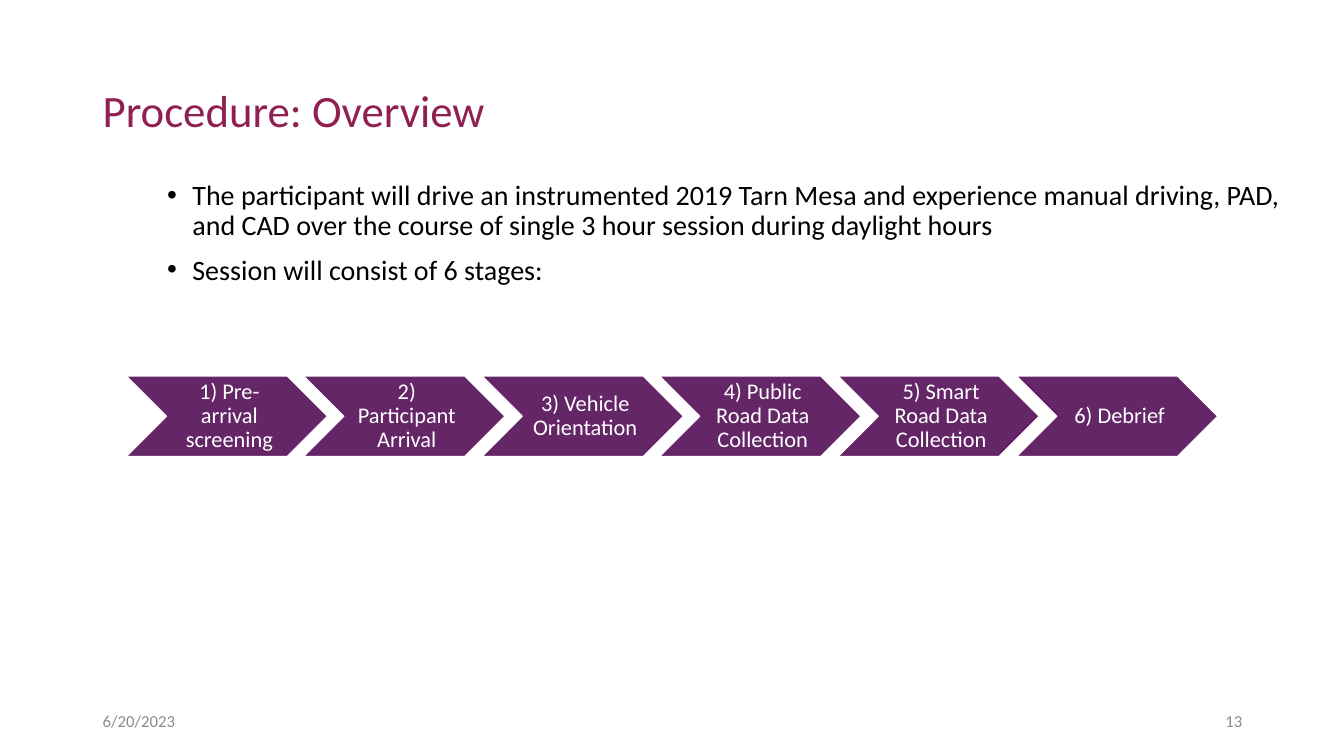
from pptx import Presentation
from pptx import util as u
from pptx.dml.color import RGBColor
from pptx.enum import shapes, text
from pptx.oxml.ns import qn
from lxml import etree

PX = 9144
FONT = "Calibri"
WINE = RGBColor(0x90, 0x20, 0x52)
PLUM = RGBColor(0x64, 0x26, 0x67)
BLACK = RGBColor(0, 0, 0)
GREY = RGBColor(0x8C, 0x8C, 0x8C)
WHITE = RGBColor(255, 255, 255)
LEFT, MID, RIGHT = text.PP_ALIGN.LEFT, text.PP_ALIGN.CENTER, text.PP_ALIGN.RIGHT
TOP, MIDDLE = text.MSO_ANCHOR.TOP, text.MSO_ANCHOR.MIDDLE

POINTS = [
    "The participant will drive an instrumented 2019 Tarn Mesa and experience manual driving, PAD, "
    "and CAD over the course of single 3 hour session during daylight hours",
    "Session will consist of 6 stages:",
]
STAGES = [
    "1) Pre-arrival screening",
    "2) Participant Arrival",
    "3) Vehicle Orientation",
    "4) Public Road Data Collection",
    "5) Smart Road Data Collection",
    "6) Debrief",
]


def area(*box):
    return [u.Emu(n * PX) for n in box]


def add_dot(para):
    props = para._p.get_or_add_pPr()
    props.set("marL", str(25 * PX))
    props.set("indent", str(-25 * PX))
    etree.SubElement(props, qn("a:buFont")).set("typeface", "Arial")
    etree.SubElement(props, qn("a:buChar")).set("char", "•")


def write(frame, lines, size, color, align=LEFT, anchor=MIDDLE, space=1.0, dots=False):
    frame.word_wrap = True
    frame.vertical_anchor = anchor
    for i, line in enumerate(lines):
        para = frame.add_paragraph() if i else frame.paragraphs[0]
        para.text = line
        para.alignment = align
        para.line_spacing = space
        if i:
            para.space_before = u.Pt(10)
        if dots:
            add_dot(para)
        para.font.name = FONT
        para.font.size = u.Pt(size)
        para.font.color.rgb = color


def add_text(slide, box, lines, size, color, **style):
    label = slide.shapes.add_textbox(*area(*box))
    write(label.text_frame, lines, size, color, **style)


def add_stage(slide, box, name):
    arrow = slide.shapes.add_shape(shapes.MSO_SHAPE.CHEVRON, *area(*box))
    arrow.shadow.inherit = False
    arrow.fill.solid()
    arrow.fill.fore_color.rgb = PLUM
    arrow.line.color.rgb = WHITE
    arrow.line.width = u.Pt(1)
    frame = arrow.text_frame
    frame.margin_left = 7 * PX
    frame.margin_top = frame.margin_right = frame.margin_bottom = 2 * PX
    write(frame, [name], 16, WHITE, align=MID, space=0.9)


def main():
    deck = Presentation()
    deck.slide_width, deck.slide_height = area(1333, 750)
    slide = deck.slides.add_slide(deck.slide_layouts[6])
    add_text(slide, (92, 40, 1150, 145), ["Procedure: Overview"], 32, WINE, space=0.9)
    add_text(slide, (156, 175, 1156, 289), POINTS, 20, BLACK,
             anchor=TOP, space=0.9, dots=True)
    add_text(slide, (92, 695, 300, 40), ["6/20/2023"], 12, GREY)
    add_text(slide, (942, 695, 300, 40), ["13"], 12, GREY, align=RIGHT)
    first, last = 125, 1008
    for i, name in enumerate(STAGES):
        left = first + (last - first) * i // (len(STAGES) - 1)
        add_stage(slide, (left, 373, 200, 80), name)
    deck.save("out.pptx")


if __name__ == "__main__":
    main()
